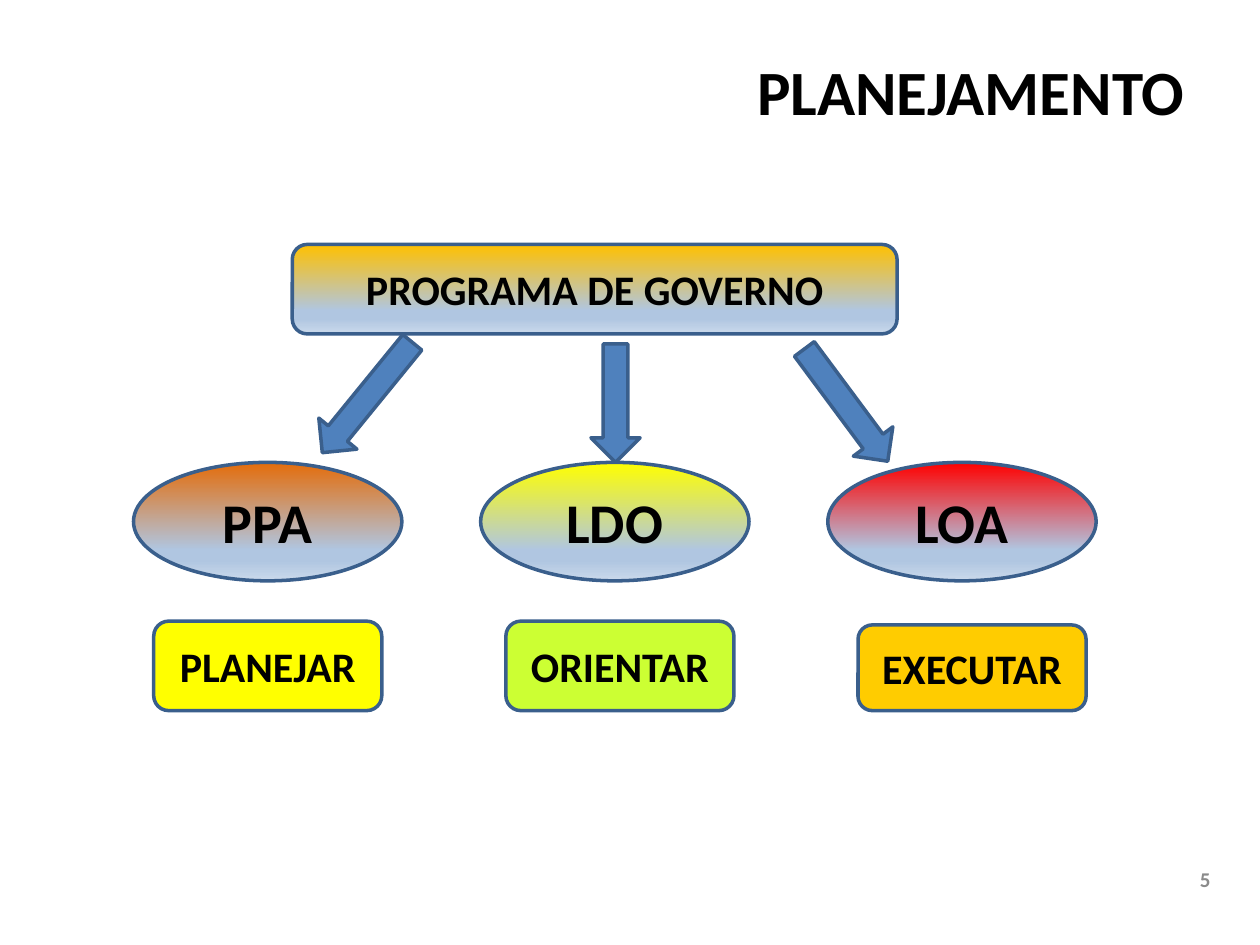
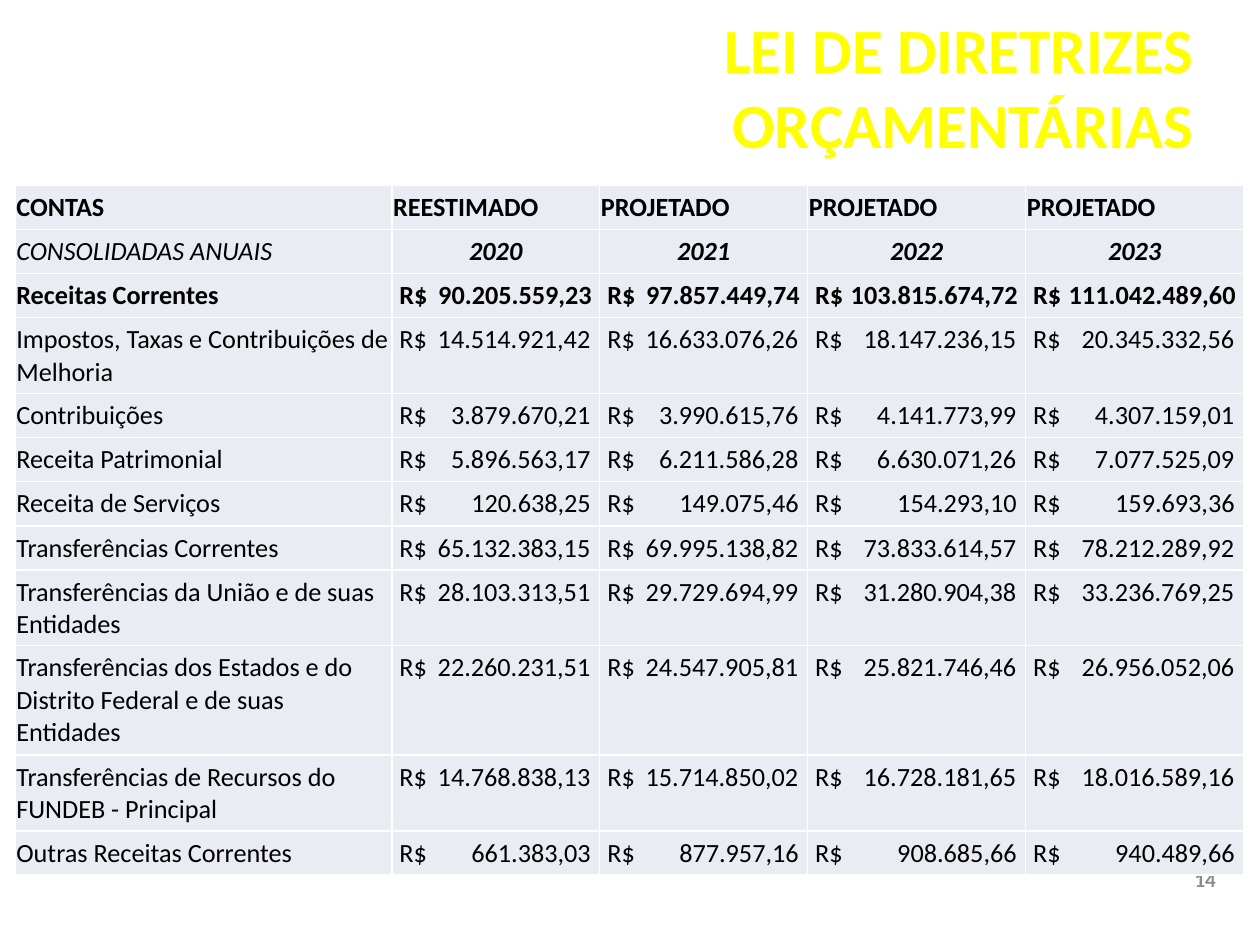
from collections import namedtuple
from copy import deepcopy
from dataclasses import dataclass

from lxml.etree import SubElement
from pptx import Presentation
from pptx.dml.color import RGBColor
from pptx.enum.shapes import MSO_SHAPE as Shape
from pptx.enum.text import MSO_ANCHOR as Anchor, PP_ALIGN as Align
from pptx.oxml.ns import qn
from pptx.util import Inches, Pt

Box = namedtuple("Box", "left top width height")


@dataclass(frozen=True)
class Theme:
    font: str = "Calibri"
    ink: str = "000000"
    muted: str = "8B8B8B"
    highlight: str = "FFFF00"
    arrow: str = "4F81BD"
    outline: str = "3A5F8C"
    cell: str = "E9ECF3"
    border: str = "FFFFFF"
    fade: tuple = ((0.74, "B0C6E1"), (0.83, "B0C6E1"), (1, "CAD9EB"))
    title_size: float = 36
    oval_size: float = 32
    label_size: float = 24
    table_size: float = 15
    number_size: float = 12
    outline_width: float = 2
    border_width: float = 0.96


THEME = Theme()

# Name, fill, tilt and box of the arrow relative to the diagram, action and its fill
PLANS = [
    ("PPA", "E46C0A", 39.2, Box(1.66, 0.65, 0.39, 1.13), "PLANEJAR", "FFFF00"),
    ("LDO", "FFFF00", 0, Box(3.63, 0.79, 0.39, 0.94), "ORIENTAR", "CCFF33"),
    ("LOA", "FF0000", 323.4, Box(5.46, 0.72, 0.39, 1.11), "EXECUTAR", "FFCC00"),
]

COLUMN_WIDTHS = [2.99, 1.65, 1.65, 1.73, 1.73]
LINE_HEIGHT = 0.29
AMOUNT_INDENT = 0.05
AMOUNT_END = 0.07
# Widths of the characters of an amount, in ems
DIGIT, SEPARATOR, CURRENCY, SPACE = 0.51, 0.26, 1.05, 0.23
HEADINGS = ["CONTAS", "REESTIMADO", "PROJETADO", "PROJETADO", "PROJETADO"]
YEARS = ["CONSOLIDADAS ANUAIS", "2020", "2021", "2022", "2023"]
# Account, lines its name takes, amount for each year
REVENUES = [
    ("Receitas Correntes", 1,
     "90.205.559,23", "97.857.449,74", "103.815.674,72", "111.042.489,60"),
    ("Impostos, Taxas e Contribuições de Melhoria", 2,
     "14.514.921,42", "16.633.076,26", "18.147.236,15", "20.345.332,56"),
    ("Contribuições", 1,
     "3.879.670,21", "3.990.615,76", "4.141.773,99", "4.307.159,01"),
    ("Receita Patrimonial", 1,
     "5.896.563,17", "6.211.586,28", "6.630.071,26", "7.077.525,09"),
    ("Receita de Serviços", 1,
     "120.638,25", "149.075,46", "154.293,10", "159.693,36"),
    ("Transferências Correntes", 1,
     "65.132.383,15", "69.995.138,82", "73.833.614,57", "78.212.289,92"),
    ("Transferências da União e de suas Entidades", 2,
     "28.103.313,51", "29.729.694,99", "31.280.904,38", "33.236.769,25"),
    ("Transferências dos Estados e do Distrito Federal e de suas Entidades", 3,
     "22.260.231,51", "24.547.905,81", "25.821.746,46", "26.956.052,06"),
    ("Transferências de Recursos do FUNDEB - Principal", 2,
     "14.768.838,13", "15.714.850,02", "16.728.181,65", "18.016.589,16"),
    ("Outras Receitas Correntes", 1,
     "661.383,03", "877.957,16", "908.685,66", "940.489,66"),
]


def set_values(target, values):
    for name, value in values.items():
        setattr(target, name, value)


def inches(box):
    return [Inches(length) for length in box]


def add_span(para, text, size, color=THEME.ink, bold=True, italic=False):
    span = para.add_run()
    span.text = text
    set_values(span.font, {"name": THEME.font, "size": Pt(size), "bold": bold, "italic": italic})
    span.font.color.rgb = RGBColor.from_string(color)
    return span


def write(frame, text, size, align=Align.CENTER, **style):
    """Fill the first paragraph of a text frame and return it."""
    frame.word_wrap = True
    para = frame.paragraphs[0]
    para.alignment = align
    add_span(para, text, size, **style)
    return para


def add_text(page, box, text, size, color, align):
    frame = page.shapes.add_textbox(*inches(box)).text_frame
    frame.vertical_anchor = Anchor.MIDDLE
    write(frame, text, size, align, color=color)


def add_title(page, box, text, color):
    add_text(page, box, text, THEME.title_size, color, Align.RIGHT)


def add_page_number(page, number):
    add_text(page, Box(9.33, 6.74, 0.47, 0.47), str(number),
             THEME.number_size, THEME.muted, Align.CENTER)


def fade_fill(shape, color):
    """Fade from the given colour at the top to the theme's pale blues."""
    shape.fill.gradient()
    shape.fill.gradient_angle = 270
    first = shape._element.spPr.find(".//" + qn("a:gs"))
    for _ in range(len(THEME.fade) + 1 - len(shape.fill.gradient_stops)):
        first.addnext(deepcopy(first))
    for stop, (position, tone) in zip(shape.fill.gradient_stops, ((0, color), *THEME.fade)):
        stop.position = position
        stop.color.rgb = RGBColor.from_string(tone)


def add_figure(page, kind, box, color, text="", size=THEME.label_size, faded=False):
    shape = page.shapes.add_shape(kind, *inches(box))
    shape.shadow.inherit = False
    if faded:
        fade_fill(shape, color)
    else:
        shape.fill.solid()
        shape.fill.fore_color.rgb = RGBColor.from_string(color)
    shape.line.color.rgb = RGBColor.from_string(THEME.outline)
    shape.line.width = Pt(THEME.outline_width)
    if text:
        shape.text_frame.vertical_anchor = Anchor.MIDDLE
        write(shape.text_frame, text, size)
    return shape


def add_planning_diagram(page, left, top):
    add_figure(page, Shape.ROUNDED_RECTANGLE, Box(left + 1.26, top, 4.8, 0.71),
               "FFC000", "PROGRAMA DE GOVERNO", faded=True)
    for index, (name, color, tilt, place, action, action_color) in enumerate(PLANS):
        oval = Box(left + 2.755 * index, top + 1.73, 2.13, 0.94)
        add_figure(page, Shape.OVAL, oval, color, name, THEME.oval_size, faded=True)
        arrow = place._replace(left=left + place.left, top=top + place.top)
        add_figure(page, Shape.DOWN_ARROW, arrow, THEME.arrow).rotation = tilt
        drop = 0.03 if action == "EXECUTAR" else 0
        label = Box(left + 0.16 + 2.795 * index, top + 2.99 + drop, 1.81, 0.71 - drop)
        add_figure(page, Shape.ROUNDED_RECTANGLE, label, action_color, action)


def style_cell(cell):
    margins = {"margin_left": 0.01, "margin_right": 0.01,
               "margin_top": 0.05, "margin_bottom": 0.05}
    set_values(cell, {name: Inches(length) for name, length in margins.items()})
    properties = cell._tc.get_or_add_tcPr()
    for side in ("lnL", "lnR", "lnT", "lnB"):
        edge = SubElement(properties, qn(f"a:{side}"), w=str(int(Pt(THEME.border_width))))
        paint = SubElement(edge, qn("a:solidFill"))
        SubElement(paint, qn("a:srgbClr"), val=THEME.border)
    cell.fill.solid()
    cell.fill.fore_color.rgb = RGBColor.from_string(THEME.cell)


def write_amount(cell, amount, width, bold):
    """Put the currency sign at the left and stretch one space so the amount ends at the right."""
    size = THEME.table_size
    para = write(cell.text_frame, "R$", size, Align.LEFT, bold=bold)
    para._p.get_or_add_pPr().set("marL", str(int(Inches(AMOUNT_INDENT))))
    gap = add_span(para, " ", size, bold=bold)
    add_span(para, amount, size, bold=bold)
    ems = CURRENCY + SPACE + sum(DIGIT if mark.isdigit() else SEPARATOR for mark in amount)
    room = Inches(width - AMOUNT_INDENT - AMOUNT_END).pt - ems * size
    gap.font._element.set("spc", str(max(0, round(room * 100))))


def add_revenue_table(page, left, top):
    line_counts = [1, 1] + [revenue[1] for revenue in REVENUES]
    box = Box(left, top, sum(COLUMN_WIDTHS), LINE_HEIGHT * sum(line_counts))
    table = page.shapes.add_table(len(line_counts), len(COLUMN_WIDTHS), *inches(box)).table
    set_values(table, {"first_row": False, "horz_banding": False})
    for column, width in zip(table.columns, COLUMN_WIDTHS):
        column.width = Inches(width)
    for row, count in zip(table.rows, line_counts):
        row.height = Inches(LINE_HEIGHT * count)
    for cell in table.iter_cells():
        style_cell(cell)

    for index, (heading, year) in enumerate(zip(HEADINGS, YEARS)):
        write(table.cell(0, index).text_frame, heading, THEME.table_size, Align.LEFT)
        write(table.cell(1, index).text_frame, year, THEME.table_size,
              Align.CENTER if index else Align.LEFT, bold=index > 0, italic=True)
    for row, (account, _, *amounts) in enumerate(REVENUES, start=2):
        is_total = row == 2
        write(table.cell(row, 0).text_frame, account, THEME.table_size,
              Align.LEFT, bold=is_total)
        for column, amount in enumerate(amounts, start=1):
            write_amount(table.cell(row, column), amount, COLUMN_WIDTHS[column], is_total)


def build_planning_page(page):
    add_title(page, Box(3.35, 0.21, 6.15, 1.02), "PLANEJAMENTO", THEME.ink)
    add_page_number(page, 5)
    add_planning_diagram(page, 1.06, 1.94)


def build_guidelines_page(page):
    add_page_number(page, 14)
    add_title(page, Box(3.06, 0.17, 6.51, 1.02),
              "LEI DE DIRETRIZES ORÇAMENTÁRIAS", THEME.highlight)
    add_revenue_table(page, 0.12, 1.47)


def main():
    deck = Presentation()
    set_values(deck, {"slide_width": Inches(10), "slide_height": Inches(7.5)})
    for build in (build_planning_page, build_guidelines_page):
        build(deck.slides.add_slide(deck.slide_layouts[6]))
    deck.save("out.pptx")


if __name__ == "__main__":
    main()
